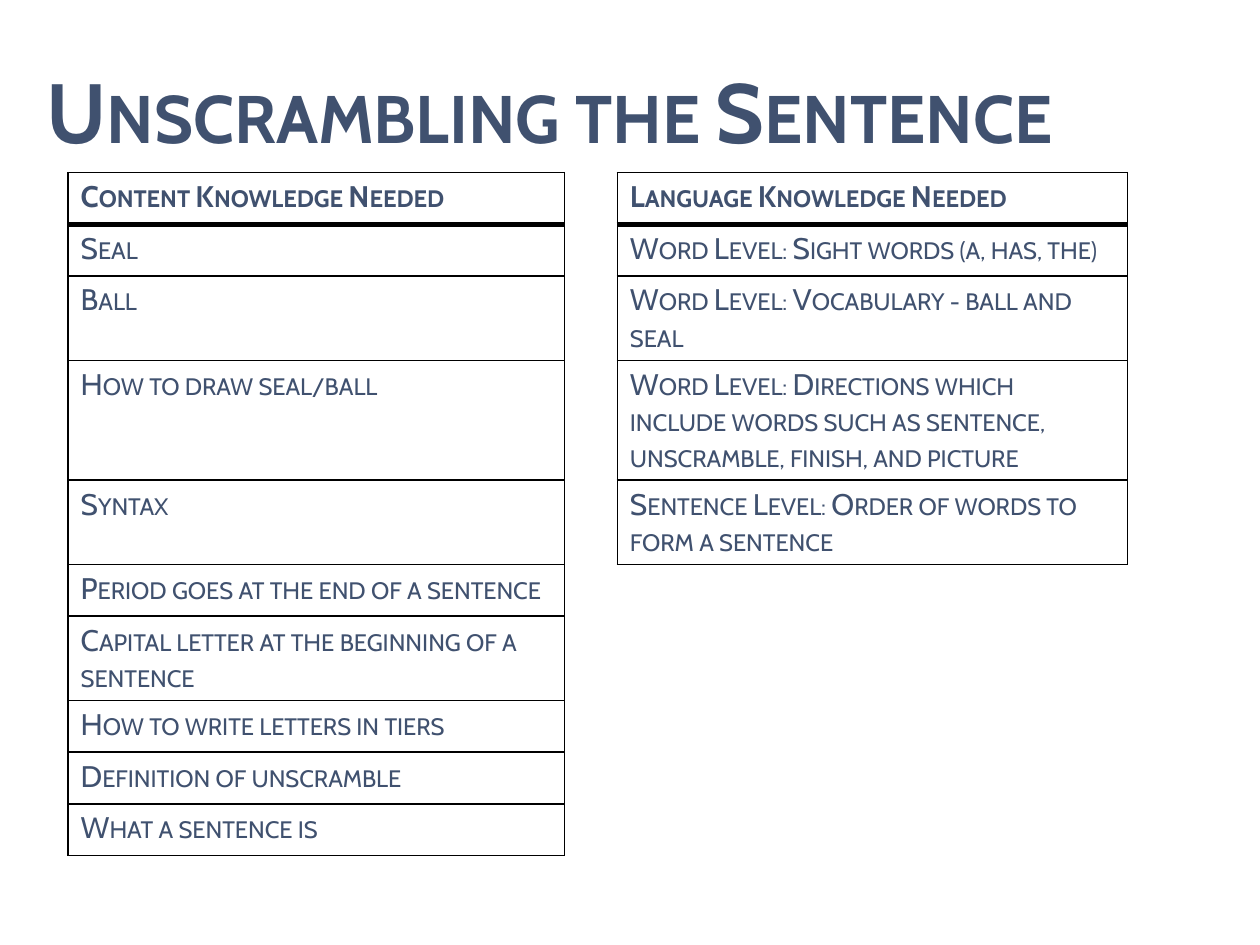
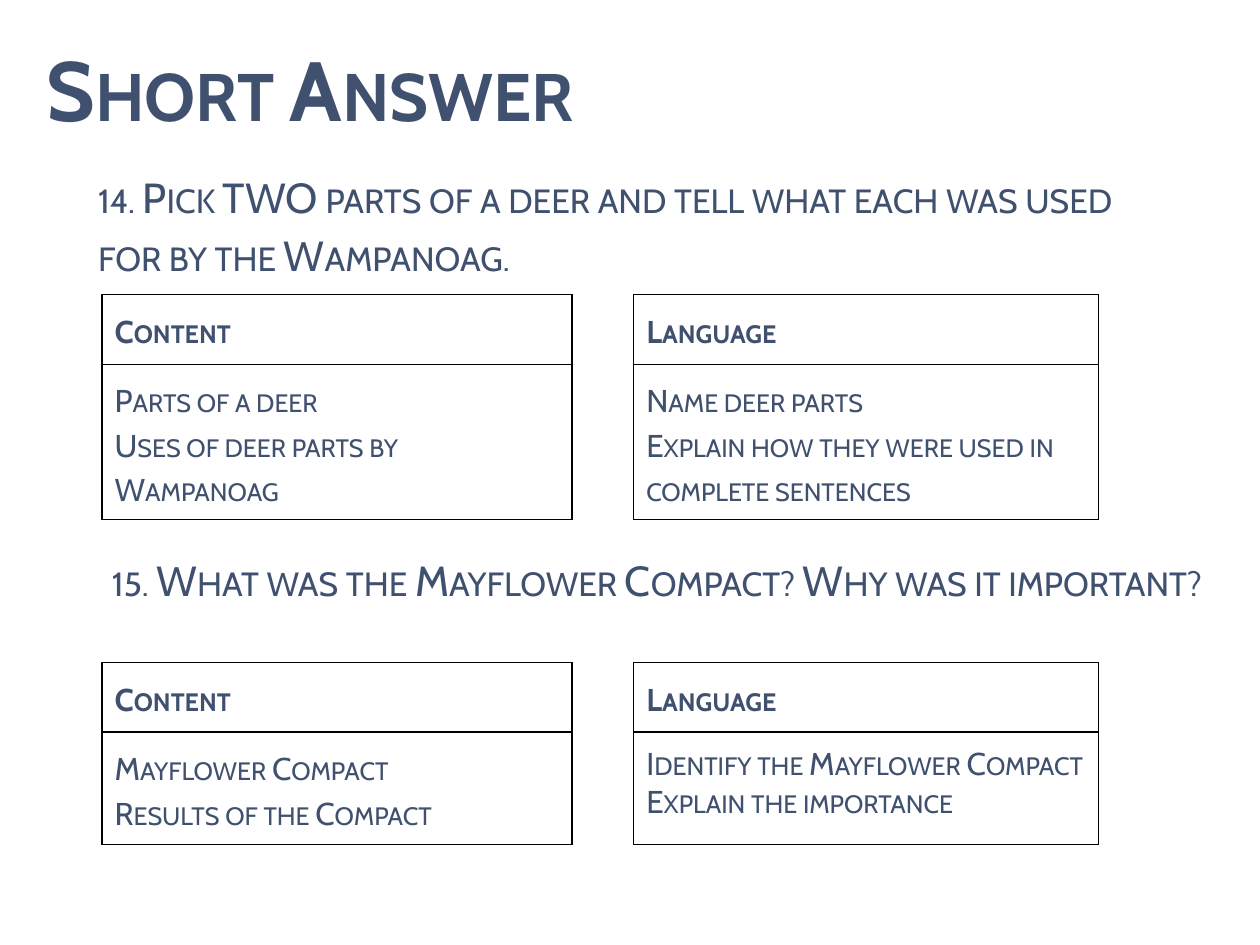
from dataclasses import dataclass

from lxml import etree
from pptx import Presentation
from pptx.dml.color import RGBColor
from pptx.enum.text import MSO_ANCHOR
from pptx.oxml.ns import qn
from pptx.util import Inches, Pt

TOP, BOTTOM = MSO_ANCHOR.TOP, MSO_ANCHOR.BOTTOM


@dataclass(frozen=True)
class Theme:
    font: str = "Cabin"
    ink: str = "40516F"
    border: str = "000000"
    paper: str = "FFFFFF"
    title_size: int = 48
    question_size: int = 24
    answer_size: int = 18
    knowledge_size: int = 17
    loose: float = 1.15
    padding: float = 0.1


THEME = Theme()

KNOWLEDGE = {
    "title": "Unscrambling the Sentence",
    "content": [
        "Content Knowledge Needed",
        "Seal",
        "Ball",
        "How to draw seal/ball",
        "Syntax",
        "Period goes at the end of a sentence",
        "Capital letter at the beginning of a sentence",
        "How to write letters in tiers",
        "Definition of unscramble",
        "What a sentence is",
    ],
    "language": [
        "Language Knowledge Needed",
        "Word Level: Sight words (a, has, the)",
        "Word Level: Vocabulary - ball and seal",
        "Word Level: Directions which include words such as sentence, "
        "unscramble, finish, and picture",
        "Sentence Level: Order of words to form a sentence",
    ],
    "lines_per_row": [1, 1, 2, 3, 2, 1, 2, 1, 1, 1],
}
HEIGHT_BY_LINES = {1: 0.41, 2: 0.67, 3: 0.95}

SHORT_ANSWER_TITLE = "Short Answer"
QUESTIONS = [
    {
        "text": "14. Pick TWO parts of a deer and tell what each was used for by the Wampanoag.",
        "box": (0.68, 1.2, 8.41, 2.15),
        "content": ["Parts of a deer", "Uses of deer parts by Wampanoag"],
        "language": ["Name deer parts", "Explain how they were used in complete sentences"],
        "language_spacing": THEME.loose,
        "table_top": 2.34,
        "row_heights": [0.55, 1.23],
    },
    {
        "text": "15. What was the Mayflower Compact? Why was it important?",
        "box": (0.79, 4.24, 8.9, 2.15),
        "content": ["Mayflower Compact", "Results of the Compact"],
        "language": ["Identify the Mayflower Compact", "Explain the importance"],
        "language_spacing": None,
        "table_top": 5.26,
        "row_heights": [0.55, 0.88],
    },
]


def write_text(text_frame, lines, *, size, bold=False, spacing=None):
    """Fill a text frame with one small-caps paragraph for each line."""
    text_frame.word_wrap = True
    for index, line in enumerate(lines):
        paragraph = text_frame.add_paragraph() if index else text_frame.paragraphs[0]
        if spacing:
            paragraph.line_spacing = spacing
        run = paragraph.add_run()
        run.text = line
        run.font.name = THEME.font
        run.font.size = Pt(size)
        run.font.bold = bold
        run.font.color.rgb = RGBColor.from_string(THEME.ink)
        run._r.get_or_add_rPr().set("cap", "small")


def set_margins(target, horizontal, vertical):
    target.margin_left = target.margin_right = Inches(horizontal)
    target.margin_top = target.margin_bottom = Inches(vertical)


def add_text(slide, box, text, *, anchor=TOP, **text_format):
    text_frame = slide.shapes.add_textbox(*map(Inches, box)).text_frame
    text_frame.vertical_anchor = anchor
    set_margins(text_frame, THEME.padding, THEME.padding)
    write_text(text_frame, [text], **text_format)


def add_title(slide, text, top, height):
    add_text(slide, (0.27, top, 9.26, height), text,
             anchor=BOTTOM, size=THEME.title_size, bold=True)


def set_border(cell, position, tag, width):
    """Add one cell edge; a width of 0 hides it."""
    line = etree.Element(qn(f"a:{tag}"), w=str(Pt(width)))
    if width:
        fill = etree.SubElement(line, qn("a:solidFill"))
        etree.SubElement(fill, qn("a:srgbClr"), val=THEME.border)
    else:
        etree.SubElement(line, qn("a:noFill"))
    cell._tc.get_or_add_tcPr().insert(position, line)


def add_table(slide, left, top, widths, heights, rows, *, size, vertical_padding,
              line_width, header_rule, spacings):
    """Draw two bordered columns apart; an edge shows where it touches a filled cell."""
    table = slide.shapes.add_table(
        len(rows), len(widths), Inches(left), Inches(top),
        Inches(sum(widths)), Inches(sum(heights))).table
    table.first_row = table.horz_banding = False
    for column, width in zip(table.columns, widths):
        column.width = Inches(width)
    for row, height in zip(table.rows, heights):
        row.height = Inches(height)

    def is_filled(r, c):
        return 0 <= r < len(rows) and 0 <= c < len(widths) and bool(rows[r][c])

    for r, row in enumerate(rows):
        for c, lines in enumerate(row):
            cell = table.cell(r, c)
            cell.fill.solid()
            cell.fill.fore_color.rgb = RGBColor.from_string(THEME.paper)
            set_margins(cell, THEME.padding, vertical_padding)
            if lines:
                write_text(cell.text_frame, lines, size=size, bold=r == 0,
                           spacing=spacings[c] if r else spacings[0])
            neighbours = [("lnL", r, c - 1), ("lnR", r, c + 1),
                          ("lnT", r - 1, c), ("lnB", r + 1, c)]
            for position, (tag, next_r, next_c) in enumerate(neighbours):
                under_header = {r, next_r} == {0, 1}
                width = header_rule if under_header else line_width
                shown = is_filled(r, c) or is_filled(next_r, next_c)
                set_border(cell, position, tag, width if shown else 0)


def build_knowledge_slide(slide):
    add_title(slide, KNOWLEDGE["title"], 0.53, 0.84)
    content, language = KNOWLEDGE["content"], KNOWLEDGE["language"]
    rows = [[[text], [], language[index:index + 1]] for index, text in enumerate(content)]
    heights = [HEIGHT_BY_LINES[count] for count in KNOWLEDGE["lines_per_row"]]
    add_table(slide, 0.54, 1.37, [3.94, 0.42, 4.05], heights, rows,
              size=THEME.knowledge_size, vertical_padding=THEME.padding / 2,
              line_width=1, header_rule=3, spacings=[None] * 3)


def build_short_answer_slide(slide):
    add_title(slide, SHORT_ANSWER_TITLE, 0.33, 0.87)
    for question in QUESTIONS:
        add_text(slide, question["box"], question["text"],
                 size=THEME.question_size, spacing=THEME.loose)
        rows = [[["Content"], [], ["Language"]],
                [question["content"], [], question["language"]]]
        add_table(slide, 0.81, question["table_top"], [3.73, 0.49, 3.69],
                  question["row_heights"], rows, size=THEME.answer_size,
                  vertical_padding=THEME.padding, line_width=0.75, header_rule=0.75,
                  spacings=[THEME.loose, None, question["language_spacing"]])


def main():
    presentation = Presentation()
    presentation.slide_width, presentation.slide_height = Inches(10), Inches(7.5)
    blank_layout = presentation.slide_layouts[6]
    for build in (build_knowledge_slide, build_short_answer_slide):
        build(presentation.slides.add_slide(blank_layout))
    presentation.save("out.pptx")


if __name__ == "__main__":
    main()
